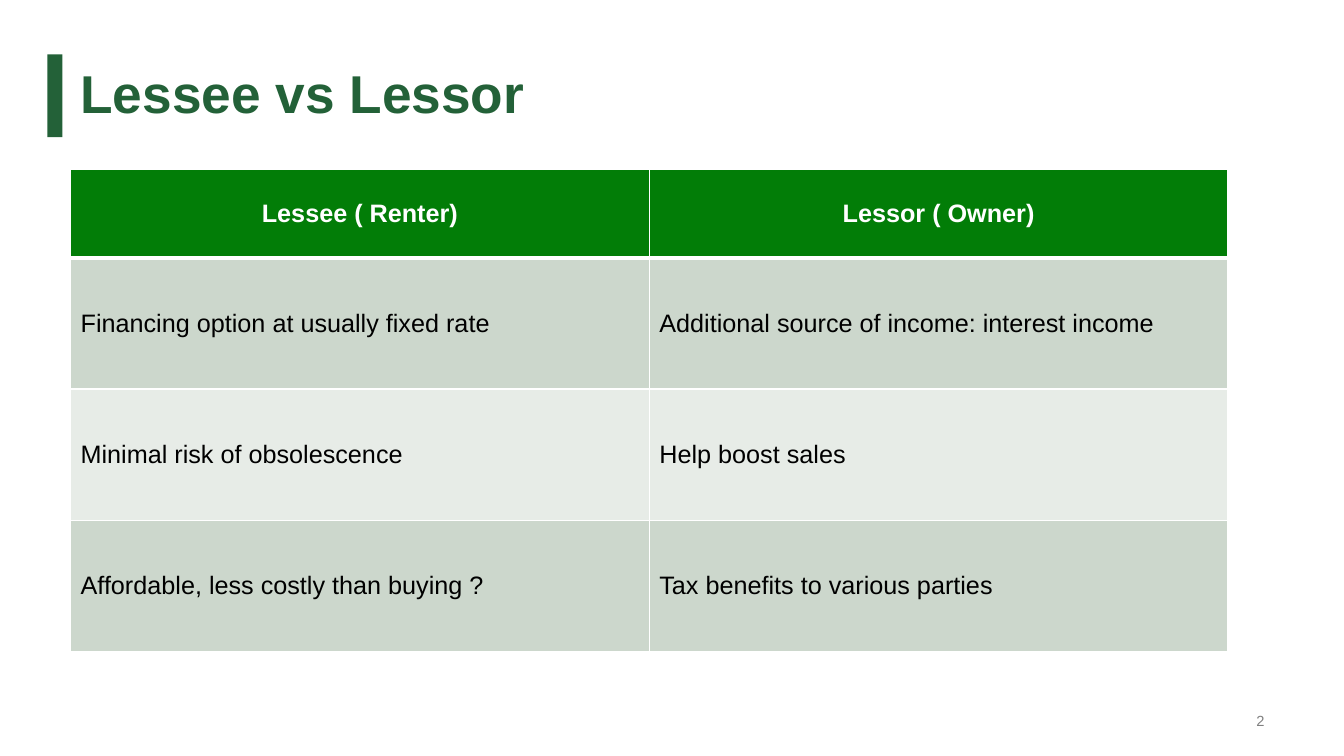
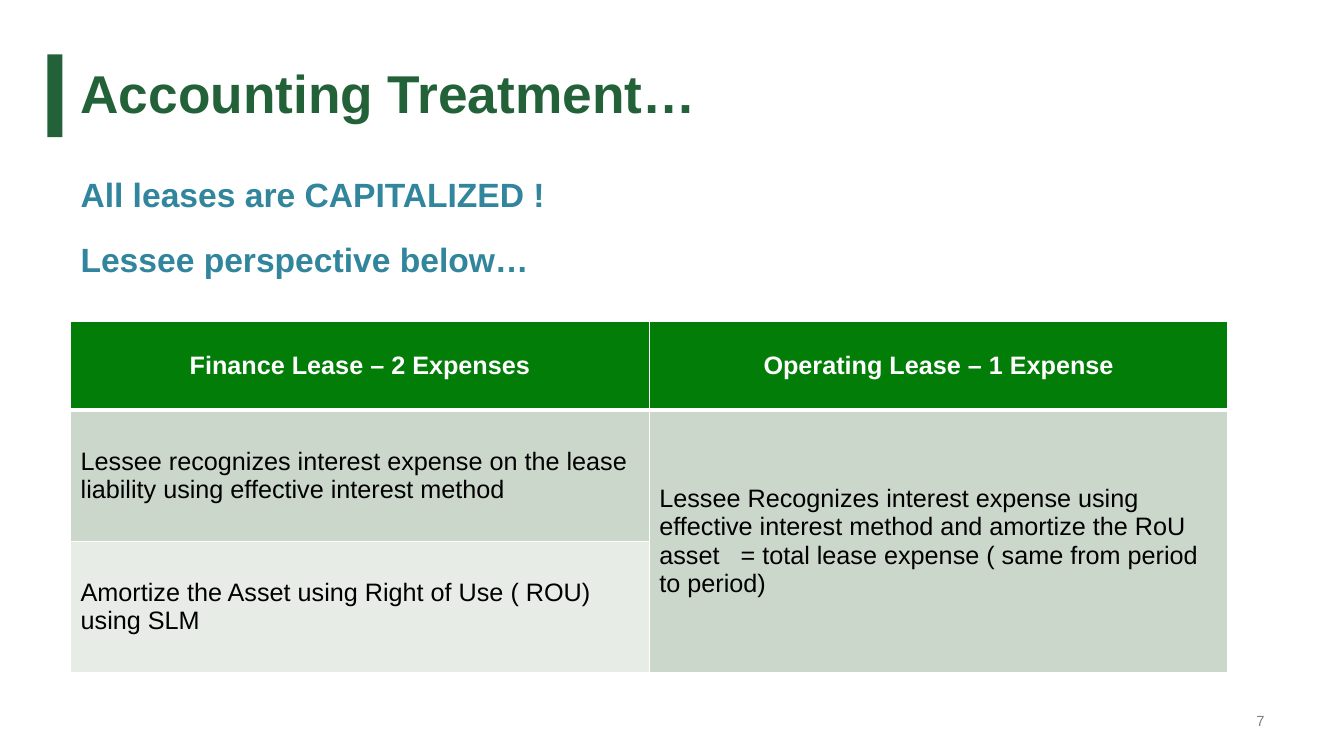
from dataclasses import dataclass

from lxml.etree import SubElement
from pptx import Presentation
from pptx.dml.color import RGBColor
from pptx.enum.shapes import MSO_SHAPE as Shape
from pptx.enum.text import MSO_ANCHOR as Anchor, PP_ALIGN as Align
from pptx.oxml.ns import qn
from pptx.slide import Slide
from pptx.table import _Cell as Cell
from pptx.text.text import _Paragraph as Paragraph
from pptx.util import Inches, Pt

FONT = "Arial"
DARK_GREEN = RGBColor(0x23, 0x61, 0x38)
HEADER_GREEN = RGBColor(0x02, 0x7D, 0x07)
BANDS = (RGBColor(0xCC, 0xD7, 0xCC), RGBColor(0xE7, 0xEC, 0xE7))
TEAL = RGBColor(0x31, 0x85, 0x9C)
GREY = RGBColor(0x80, 0x80, 0x80)
WHITE = RGBColor(0xFF, 0xFF, 0xFF)
BLACK = RGBColor(0x00, 0x00, 0x00)

LEFT = 0.7
TEXT_WIDTH = 11.72
TITLE_TOP, TITLE_HEIGHT = 0.54, 0.82
COLUMN_WIDTH = 5.74
HEADER_HEIGHT, ROW_HEIGHT = 0.88, 1.3
STATEMENT_TOP, STATEMENT_STEP = 1.72, 0.64


@dataclass(frozen=True)
class TextStyle:
    size: float
    color: RGBColor
    bold: bool = False
    align: Align = Align.LEFT
    anchor: Anchor = Anchor.MIDDLE
    line_spacing: float = 1.0
    space_before: float = 0


@dataclass(frozen=True)
class Page:
    title: str
    number: int
    table_top: float
    rows: tuple[tuple[str | None, ...], ...]
    statements: tuple[str, ...] = ()


TITLE = TextStyle(38, DARK_GREEN, bold=True, line_spacing=0.9)
NUMBER = TextStyle(10.5, GREY, align=Align.RIGHT)
STATEMENT = TextStyle(24, TEAL, bold=True, anchor=Anchor.BOTTOM, line_spacing=0.9, space_before=10)
HEADER = TextStyle(18, WHITE, bold=True, align=Align.CENTER)
BODY = TextStyle(18, BLACK)

PAGES = (
    Page(
        "Lessee vs Lessor", 2, 1.68,
        (
            ("Lessee ( Renter)", "Lessor ( Owner)"),
            ("Financing option at usually fixed rate", "Additional source of income: interest income"),
            ("Minimal risk of obsolescence", "Help boost sales"),
            ("Affordable, less costly than buying ?", "Tax benefits to various parties"),
        ),
    ),
    Page(
        "Accounting Treatment…", 7, 3.19,
        (
            ("Finance Lease – 2 Expenses", "Operating Lease – 1 Expense"),
            (
                "Lessee recognizes interest expense on the lease liability using effective interest method",
                "Lessee Recognizes interest expense using effective interest method and amortize "
                "the RoU asset   = total lease expense ( same from period to period)",
            ),
            ("Amortize the Asset using Right of Use ( ROU) using SLM", None),
        ),
        ("All leases are CAPITALIZED !", "Lessee perspective below…"),
    ),
)


def format_paragraph(paragraph: Paragraph, style: TextStyle) -> None:
    """Apply a text style to a paragraph and its runs."""
    paragraph.alignment = style.align
    paragraph.line_spacing = style.line_spacing
    paragraph.space_before = Pt(style.space_before)
    for run in paragraph.runs:
        run.font.name = FONT
        run.font.size = Pt(style.size)
        run.font.bold = style.bold
        run.font.color.rgb = style.color


def add_text(slide: Slide, text: str, left: float, top: float, width: float, height: float,
             style: TextStyle) -> None:
    """Add a wrapped one-paragraph text box."""
    box = slide.shapes.add_textbox(Inches(left), Inches(top), Inches(width), Inches(height))
    frame = box.text_frame
    frame.word_wrap = True
    frame.vertical_anchor = style.anchor
    frame.text = text
    format_paragraph(frame.paragraphs[0], style)


def add_borders(cell: Cell, top: float, bottom: float) -> None:
    """Draw white cell borders, with the given top and bottom widths in points."""
    properties = cell._tc.get_or_add_tcPr()
    for tag, width in (("a:lnL", 1), ("a:lnR", 1), ("a:lnT", top), ("a:lnB", bottom)):
        line = SubElement(properties, qn(tag), w=str(Pt(width)))
        fill = SubElement(line, qn("a:solidFill"))
        SubElement(fill, qn("a:srgbClr"), val=str(WHITE))


def add_comparison(slide: Slide, page: Page) -> None:
    """Add the banded table; a missing text extends the cell above."""
    row_count, column_count = len(page.rows), len(page.rows[0])
    height = HEADER_HEIGHT + ROW_HEIGHT * (row_count - 1)
    table = slide.shapes.add_table(
        row_count, column_count, Inches(LEFT), Inches(page.table_top),
        Inches(COLUMN_WIDTH * column_count), Inches(height),
    ).table
    for column in table.columns:
        column.width = Inches(COLUMN_WIDTH)
    for row_index, texts in enumerate(page.rows):
        is_header = row_index == 0
        table.rows[row_index].height = Inches(HEADER_HEIGHT if is_header else ROW_HEIGHT)
        style = HEADER if is_header else BODY
        for column_index, text in enumerate(texts):
            cell = table.cell(row_index, column_index)
            add_borders(cell, top=3 if row_index == 1 else 1, bottom=3 if is_header else 1)
            cell.fill.solid()
            cell.fill.fore_color.rgb = HEADER_GREEN if is_header else BANDS[(row_index - 1) % 2]
            if text is None:
                table.cell(row_index - 1, column_index).merge(cell)
                continue
            cell.vertical_anchor = style.anchor
            cell.text_frame.text = text
            format_paragraph(cell.text_frame.paragraphs[0], style)


def add_frame(slide: Slide, page: Page) -> None:
    """Add the accent bar, title and page number."""
    bar = slide.shapes.add_shape(
        Shape.RECTANGLE, Inches(0.47), Inches(TITLE_TOP), Inches(0.15), Inches(TITLE_HEIGHT))
    bar.shadow.inherit = False
    bar.fill.solid()
    bar.fill.fore_color.rgb = DARK_GREEN
    bar.line.fill.background()
    add_text(slide, page.title, LEFT, TITLE_TOP, TEXT_WIDTH, TITLE_HEIGHT, TITLE)
    add_text(slide, str(page.number), 9.64, 6.95, 3, 0.4, NUMBER)


def main() -> None:
    """Build and save the presentation."""
    presentation = Presentation()
    presentation.slide_width, presentation.slide_height = Inches(13.33), Inches(7.5)
    for page in PAGES:
        slide = presentation.slides.add_slide(presentation.slide_layouts[6])
        add_frame(slide, page)
        add_comparison(slide, page)
        for index, statement in enumerate(page.statements):
            top = STATEMENT_TOP + index * STATEMENT_STEP
            add_text(slide, statement, LEFT, top, TEXT_WIDTH, 0.46, STATEMENT)
    presentation.save("out.pptx")


if __name__ == "__main__":
    main()
